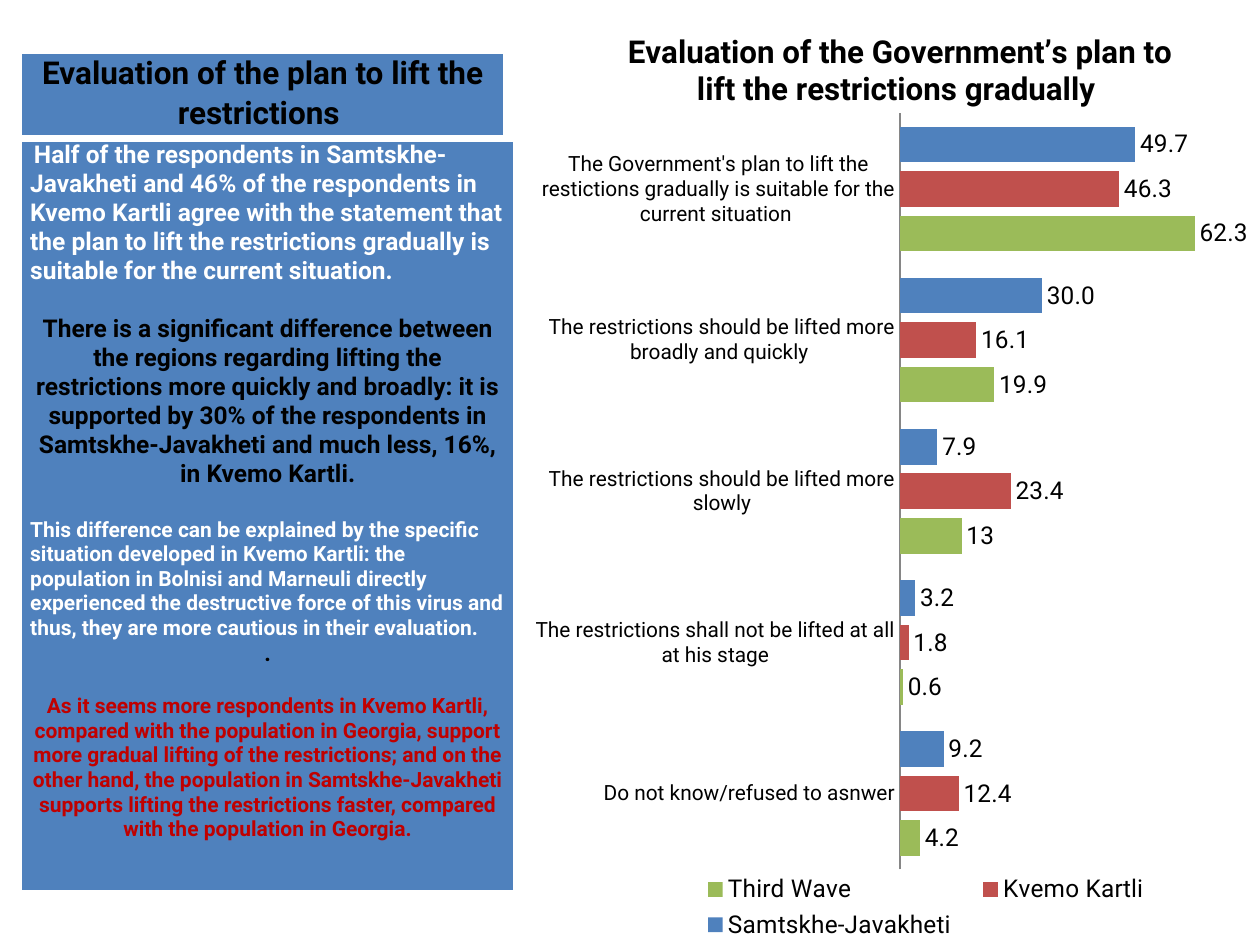
"""Builds a slide comparing regional views on lifting restrictions."""
from dataclasses import dataclass

from lxml import etree
from pptx import Presentation
from pptx.chart.data import CategoryChartData
from pptx.dml.color import RGBColor
from pptx.enum import chart as c, text as t
from pptx.oxml import ns
from pptx.util import Inches, Pt

BLUE = RGBColor(0x4F, 0x81, 0xBD)
RED = RGBColor(0xC0, 0x50, 0x4D)
GREEN = RGBColor(0x9B, 0xBB, 0x59)
DARK_RED = RGBColor(0xC0, 0x00, 0x00)
GRAY = RGBColor(0x86, 0x86, 0x86)
BLACK = RGBColor(0, 0, 0)
WHITE = RGBColor(0xFF, 0xFF, 0xFF)
FONT = "Roboto"


@dataclass(frozen=True)
class Passage:
    text: str
    size: float
    color: RGBColor
    centered: bool = True
    space_before: float = 0
    indent: float = 0
    line_spacing: float = 1.0


@dataclass(frozen=True)
class Panel:
    top: float
    width: float
    height: float
    passages: tuple[Passage, ...]


@dataclass(frozen=True)
class Series:
    name: str
    values: tuple[float, ...]
    color: RGBColor
    label_format: str = "###0.0"


PANELS = (
    Panel(0.42, 3.83, 0.67, (
        Passage("Evaluation of the plan to lift the restrictions ", 18, BLACK, line_spacing=1.07),
    )),
    Panel(1.12, 3.91, 5.96, (
        Passage("Half of the respondents in Samtskhe-Javakheti and 46% of the respondents in "
                "Kvemo Kartli agree with the statement that the plan to lift the restrictions "
                "gradually is suitable for the current situation.", 14, WHITE, False, indent=0.03),
        Passage("There is a significant difference between the regions regarding lifting the "
                "restrictions more quickly and broadly: it is supported by 30% of the respondents "
                "in Samtskhe-Javakheti and much less, 16%, in Kvemo Kartli.",
                14, BLACK, space_before=16.5),
        Passage("This difference can be explained by the specific situation developed in Kvemo "
                "Kartli: the population in Bolnisi and Marneuli directly experienced the "
                "destructive force of this virus and thus, they are more cautious in their "
                "evaluation.", 12, WHITE, False, space_before=16.5),
        Passage(".", 13, BLACK),
        Passage("As it seems more respondents in Kvemo Kartli, compared with the population in "
                "Georgia, support more gradual lifting of the restrictions; and on the other hand, "
                "the population in Samtskhe-Javakheti supports lifting the restrictions faster, "
                "compared with the population in Georgia.", 12, DARK_RED, space_before=15.5),
    )),
)

CHART_TITLE = "Evaluation of the Government’s plan to lift the restrictions gradually "
CATEGORIES = (
    "The Government's plan to lift the restictions gradually is suitable for the current situation ",
    " The restrictions should be lifted more broadly and quickly",
    "The restrictions should be lifted more slowly",
    "The restrictions shall not be lifted at all at his stage",
    "Do not know/refused to asnwer",
)
SERIES = (
    Series("Samtskhe-Javakheti", (49.7, 30, 7.9, 3.2, 9.2), BLUE),
    Series("Kvemo Kartli ", (46.3, 16.1, 23.4, 1.8, 12.4), RED),
    Series("Third Wave", (62.3, 19.9, 13, 0.6, 4.2), GREEN, "General"),
)


def set_font(font, size: float, color: RGBColor = BLACK, bold: bool = False) -> None:
    font.name, font.size, font.bold = FONT, Pt(size), bold
    font.color.rgb = color


def add_borders(cell) -> None:
    properties = cell._tc.get_or_add_tcPr()
    for side, width in (("L", 1), ("R", 1), ("T", 1), ("B", 3)):
        line = etree.SubElement(properties, ns.qn(f"a:ln{side}"), w=str(Pt(width)))
        fill = etree.SubElement(line, ns.qn("a:solidFill"))
        etree.SubElement(fill, ns.qn("a:srgbClr"), val=str(WHITE))


def add_panel(slide, panel: Panel) -> None:
    table = slide.shapes.add_table(1, 1, Inches(0.17), Inches(panel.top),
                                   Inches(panel.width), Inches(panel.height)).table
    table.first_row = table.horz_banding = False
    cell = table.cell(0, 0)
    add_borders(cell)
    cell.fill.solid()
    cell.fill.fore_color.rgb = BLUE
    cell.margin_left = cell.margin_right = Inches(0.07)
    cell.margin_top = cell.margin_bottom = 0
    frame = cell.text_frame
    for index, passage in enumerate(panel.passages):
        paragraph = frame.add_paragraph() if index else frame.paragraphs[0]
        paragraph.text = passage.text
        paragraph.alignment = t.PP_ALIGN.CENTER if passage.centered else t.PP_ALIGN.LEFT
        paragraph.space_before = Pt(passage.space_before)
        paragraph.line_spacing = passage.line_spacing
        paragraph._p.get_or_add_pPr().set("indent", str(Inches(passage.indent)))
        set_font(paragraph.font, passage.size, passage.color, True)


def set_layout(element, position: int, inner: bool, **bounds: float) -> None:
    for existing in element.findall(ns.qn("c:layout")):
        element.remove(existing)
    layout = etree.Element(ns.qn("c:layout"))
    manual = etree.SubElement(layout, ns.qn("c:manualLayout"))
    settings = {"layoutTarget": "inner"} if inner else {}
    settings |= {"xMode": "edge", "yMode": "edge"} | bounds
    for name, value in settings.items():
        etree.SubElement(manual, ns.qn(f"c:{name}"), val=str(value))
    element.insert(position, layout)


def add_bar_chart(slide) -> None:
    data = CategoryChartData()
    data.categories = CATEGORIES
    for series in SERIES:
        data.add_series(series.name, series.values)
    chart = slide.shapes.add_chart(c.XL_CHART_TYPE.BAR_CLUSTERED, Inches(4.25), 0,
                                   Inches(5.75), Inches(7.5), data).chart
    set_font(chart.font, 14)
    chart.has_title = True
    title = chart.chart_title.text_frame.paragraphs[0]
    title.text = CHART_TITLE
    set_font(title.font, 18, bold=True)

    plot = chart.plots[0]
    plot.gap_width, plot.overlap, plot.vary_by_categories = 75, -25, False
    for drawn, series in zip(plot.series, SERIES):
        drawn.format.fill.solid()
        drawn.format.fill.fore_color.rgb = series.color
        labels = drawn.data_labels
        labels.show_value = True
        labels.position = c.XL_LABEL_POSITION.OUTSIDE_END
        labels.number_format = series.label_format
        labels.number_format_is_linked = False
        set_font(labels.font, 14)

    for axis in (chart.category_axis, chart.value_axis):
        axis.major_tick_mark = axis.minor_tick_mark = c.XL_TICK_MARK.NONE
        axis.has_major_gridlines = False
    chart.category_axis.reverse_order = True
    chart.category_axis.format.line.color.rgb = GRAY
    set_font(chart.category_axis.tick_labels.font, 12)
    values = chart.value_axis
    values.minimum_scale, values.maximum_scale = 0, 70
    values.tick_label_position = c.XL_TICK_LABEL_POSITION.NONE
    values.format.line.fill.background()

    chart.has_legend = True
    legend = chart.legend
    legend.position = c.XL_LEGEND_POSITION.BOTTOM
    legend.include_in_layout = False
    set_font(legend.font, 14)
    set_layout(legend._element, 1, False, x=0.2, y=0.92, w=0.68, h=0.08)
    plot_area = chart._chartSpace.chart.plotArea
    set_layout(plot_area, 0, True, x=0.5, y=0.12, w=0.46, h=0.8)


def main() -> None:
    presentation = Presentation()
    presentation.slide_width, presentation.slide_height = Inches(10), Inches(7.5)
    slide = presentation.slides.add_slide(presentation.slide_layouts[6])
    add_bar_chart(slide)
    for panel in PANELS:
        add_panel(slide, panel)
    presentation.save("out.pptx")


if __name__ == "__main__":
    main()
